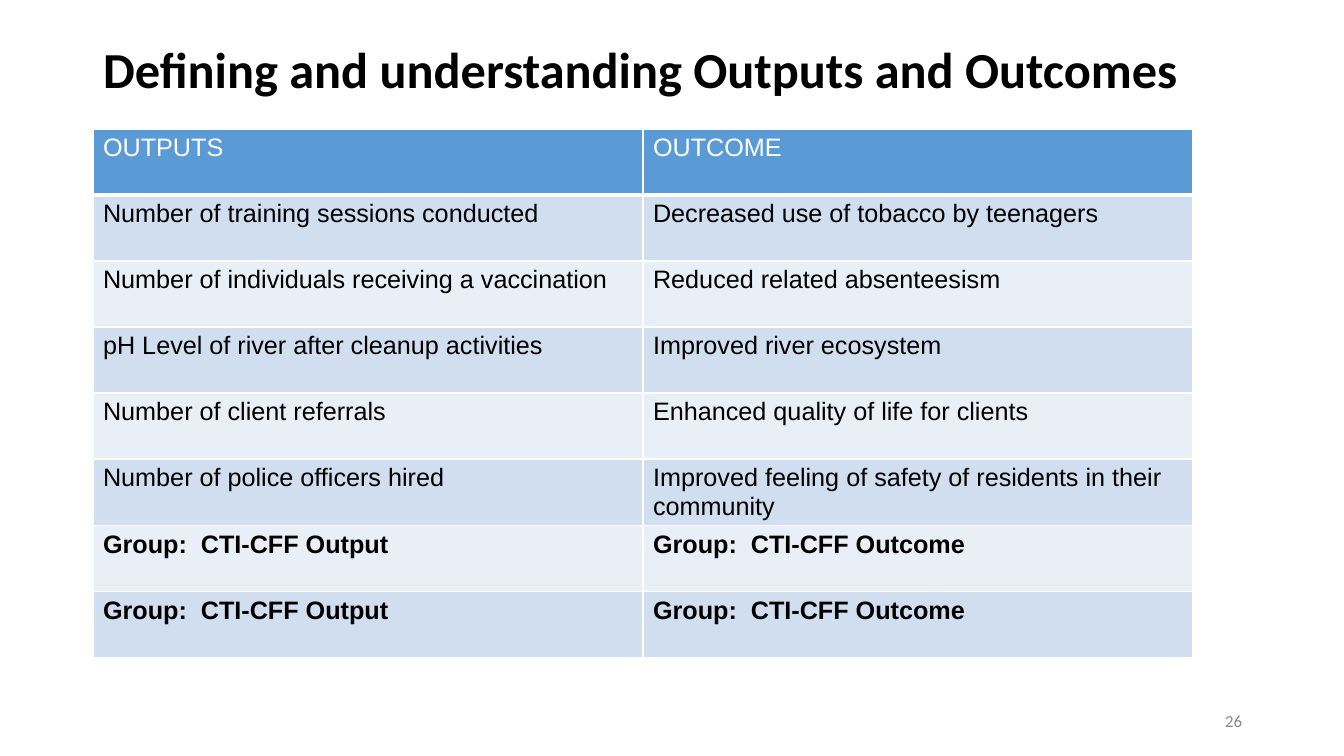
from lxml import etree
from pptx import Presentation
from pptx.dml.color import RGBColor
from pptx.enum.text import MSO_ANCHOR, PP_ALIGN
from pptx.oxml.ns import qn
from pptx.util import Pt

PX = 914400 / 100.8
MIDDLE = MSO_ANCHOR.MIDDLE
LEFT, RIGHT = PP_ALIGN.LEFT, PP_ALIGN.RIGHT


def paint(target, color):
    target.rgb = RGBColor.from_string(color)


def write(frame, text, color, look, align=LEFT):
    frame.text = text
    frame.word_wrap = True
    para = frame.paragraphs[0]
    para.alignment = align
    font = para.runs[0].font
    for key, value in look.items():
        setattr(font, key, value)
    paint(font.color, color)
    return para


deck = Presentation()
deck.slide_width, deck.slide_height = round(1344 * PX), round(756 * PX)
slide = deck.slides.add_slide(deck.slide_layouts[5])

title = slide.shapes.title
place = {"left": 93, "top": 40, "width": 1159, "height": 65}
for key, value in place.items():
    setattr(title, key, round(value * PX))
title.text_frame.vertical_anchor = MIDDLE
head = write(title.text_frame, "Defining and understanding Outputs and Outcomes",
             "000000", {"name": "Calibri", "size": Pt(36), "bold": True})
head.line_spacing = 0.9

rows = [
    ("OUTPUTS", "OUTCOME"),
    ("Number of training sessions conducted", "Decreased use of tobacco by teenagers"),
    ("Number of individuals receiving a vaccination", "Reduced related absenteesism"),
    ("pH Level of river after cleanup activities", "Improved river ecosystem"),
    ("Number of client referrals", "Enhanced quality of life for clients"),
    ("Number of police officers hired",
     "Improved feeling of safety of residents in their community"),
    ("Group:  CTI-CFF Output", "Group:  CTI-CFF Outcome"),
    ("Group:  CTI-CFF Output", "Group:  CTI-CFF Outcome"),
]
area = [round(n * PX) for n in (93, 129, 1100, 66 * len(rows))]
table = slide.shapes.add_table(len(rows), 2, *area).table
bands = ["E9EFF7", "D0DEEF"]
for r, row in enumerate(rows):
    for c, text in enumerate(row):
        cell = table.cell(r, c)
        look = {"name": "Arial", "size": Pt(18), "bold": r >= 6}
        write(cell.text_frame, text, "000000" if r else "FFFFFF", look)
        props = cell._tc.get_or_add_tcPr()
        for side in ("lnL", "lnR", "lnT", "lnB"):
            thick = (r, side) in ((0, "lnB"), (1, "lnT"))
            line = etree.SubElement(props, qn("a:" + side), w=str(Pt(3 if thick else 1)))
            fill = etree.SubElement(line, qn("a:solidFill"))
            etree.SubElement(fill, qn("a:srgbClr"), val="FFFFFF")
        cell.fill.solid()
        paint(cell.fill.fore_color, bands[r % 2] if r else "5B9BD5")

spot = [round(n * PX) for n in (950, 701, 302, 40)]
number = slide.shapes.add_textbox(*spot).text_frame
number.vertical_anchor = MIDDLE
write(number, "26", "888888", {"name": "Calibri", "size": Pt(12)}, RIGHT)

deck.save("out.pptx")
